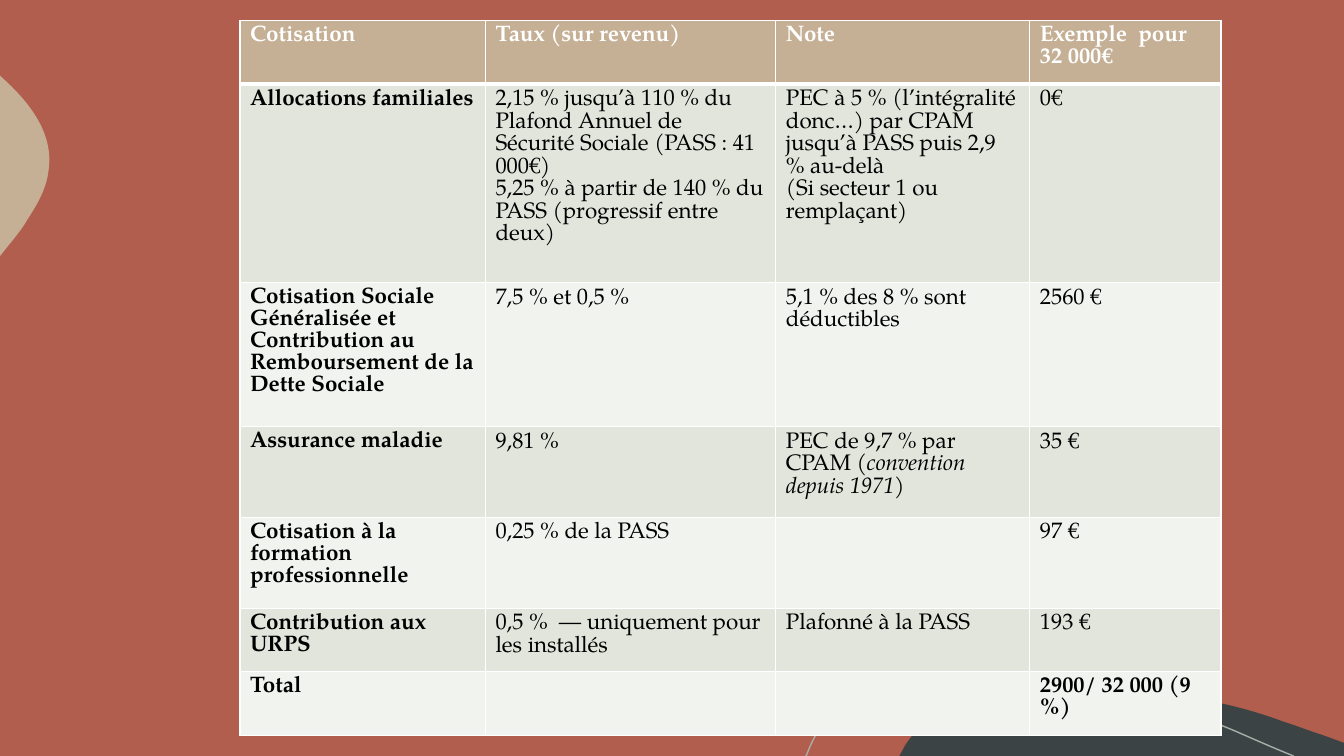
from pptx import Presentation
from pptx.dml.color import RGBColor
from pptx.util import Pt
from lxml.etree import SubElement
from pptx.oxml.ns import qn

STEP = 9144
WIDE, HIGH = 1333, 750
FONT = "TeX Gyre Pagella"
RUST, SAND, SLATE, GREY = "B15E4E", "C5B096", "3B4345", "A9AEA7"
WHITE, BLACK = "FFFFFF", "000000"
BANDS = ["F0F3EE", "E1E5DC"]

COLS = [243.5, 288, 252, 189.5]
ROWS = [63.5, 197, 143, 90, 90, 63, 63.5]
DUES = [
    ["Cotisation", "Taux (sur revenu)", "Note", "Exemple  pour 32 000€"],
    ["Allocations familiales",
     "2,15 % jusqu’à 110 % du Plafond Annuel de Sécurité Sociale (PASS : 41 000€)\n"
     "5,25 % à partir de 140 % du PASS (progressif entre deux)",
     "PEC à 5 % (l’intégralité donc…) par CPAM jusqu’à PASS puis 2,9 % au-delà\n"
     "(Si secteur 1 ou remplaçant)",
     "0€"],
    ["Cotisation Sociale Généralisée et Contribution au Remboursement de la Dette Sociale",
     "7,5 % et 0,5 %", "5,1 % des 8 % sont déductibles", "2560 €"],
    ["Assurance maladie", "9,81 %",
     "PEC de 9,7 % par CPAM *(convention depuis 1971)*", "35 €"],
    ["Cotisation à la formation professionnelle", "0,25 % de la PASS", "", "97 €"],
    ["Contribution aux URPS", "0,5 %  — uniquement pour les installés",
     "Plafonné à la PASS", "193 €"],
    ["Total", "", "", "2900/ 32 000 (9 %)"],
]

HILL = [
    (1054, 683), (1128, 683, 1204, 690, 1273, 716),
    (1286, 720, 1298, 725, 1311, 729), (1333, 737), (1333, 750), (892, 750),
    (898, 739), (902, 733, 906, 728, 911, 723),
    (939, 693, 982, 684, 1023, 683), (1033, 683, 1043, 683, 1054, 683),
]
LEAF = [
    (0, 75), (1, 76), (30, 102, 54, 133, 48, 170), (46, 187, 37, 203, 27, 218),
    (24, 224, 17, 233, 8, 244), (0, 254),
]
ARC = [
    (799, 750), (800, 749), (806, 733, 814, 719, 824, 708),
    (850, 681, 889, 673, 926, 672), (955, 672),
    (1022, 672, 1100, 689, 1155, 702), (1209, 715, 1226, 727, 1283, 750),
]


def tint(code):
    return RGBColor.from_string(code)


def paint(fill, code):
    fill.solid()
    fill.fore_color.rgb = tint(code)


def write(frame, text, size=16, bold=False, color=BLACK):
    frame.word_wrap = True
    for row, line in enumerate(text.split("\n")):
        para = frame.paragraphs[0] if row == 0 else frame.add_paragraph()
        for turn, part in enumerate(line.split("*")):
            if part:
                run = para.add_run()
                run.text = part
                font = run.font
                font.name, font.size = FONT, Pt(size)
                font.bold, font.italic = bold, turn % 2 == 1
                font.color.rgb = tint(color)


def bend(shape, legs):
    for node, leg in zip(list(shape._element.iter(qn("a:lnTo"))), legs):
        if len(leg) == 6:
            node.tag = qn("a:cubicBezTo")
            for child in list(node):
                node.remove(child)
            for x, y in zip(leg[::2], leg[1::2]):
                SubElement(node, qn("a:pt"), x=str(x * STEP - shape.left),
                           y=str(y * STEP - shape.top))


def outline(slide, route, fill=None, line=None):
    dots = [(leg[-2] * STEP, leg[-1] * STEP) for leg in route]
    pen = slide.shapes.build_freeform(*dots[0], scale=1.0)
    pen.add_line_segments(dots[1:], close=fill is not None)
    shape = pen.convert_to_shape()
    bend(shape, route[1:])
    shape.shadow.inherit = False
    if fill:
        paint(shape.fill, fill)
    else:
        shape.fill.background()
    if line:
        paint(shape.line.fill, line)
        shape.line.width = Pt(1)
    else:
        shape.line.fill.background()


def border(cell, **sides):
    props = cell._tc.get_or_add_tcPr()
    for side, width in sides.items():
        edge = SubElement(props, qn("a:ln" + side), w=str(Pt(width)))
        SubElement(SubElement(edge, qn("a:solidFill")), qn("a:srgbClr"), val=WHITE)


def grid(slide, left, top):
    size = [int(sum(spans) * STEP) for spans in (COLS, ROWS)]
    table = slide.shapes.add_table(
        len(ROWS), len(COLS), left * STEP, top * STEP, *size).table
    for col, width in zip(table.columns, COLS):
        col.width = int(width * STEP)
    for row, height in zip(table.rows, ROWS):
        row.height = int(height * STEP)
    last = len(ROWS) - 1
    for r, texts in enumerate(DUES):
        for c, text in enumerate(texts):
            cell = table.cell(r, c)
            border(cell, L=1, R=1, T=3 if r == 1 else 1, B=3 if r == 0 else 1)
            paint(cell.fill, BANDS[r % 2] if r else SAND)
            if text:
                write(cell.text_frame, text, bold=c == 0 or r in (0, last),
                      color=BLACK if r else WHITE)


def main():
    deck = Presentation()
    deck.slide_width, deck.slide_height = WIDE * STEP, HIGH * STEP
    slide = deck.slides.add_slide(deck.slide_layouts[6])
    paint(slide.background.fill, RUST)
    outline(slide, HILL, fill=SLATE)
    outline(slide, LEAF, fill=SAND)
    outline(slide, ARC, line=GREY)
    grid(slide, 238, 20)
    deck.save("out.pptx")


if __name__ == "__main__":
    main()
